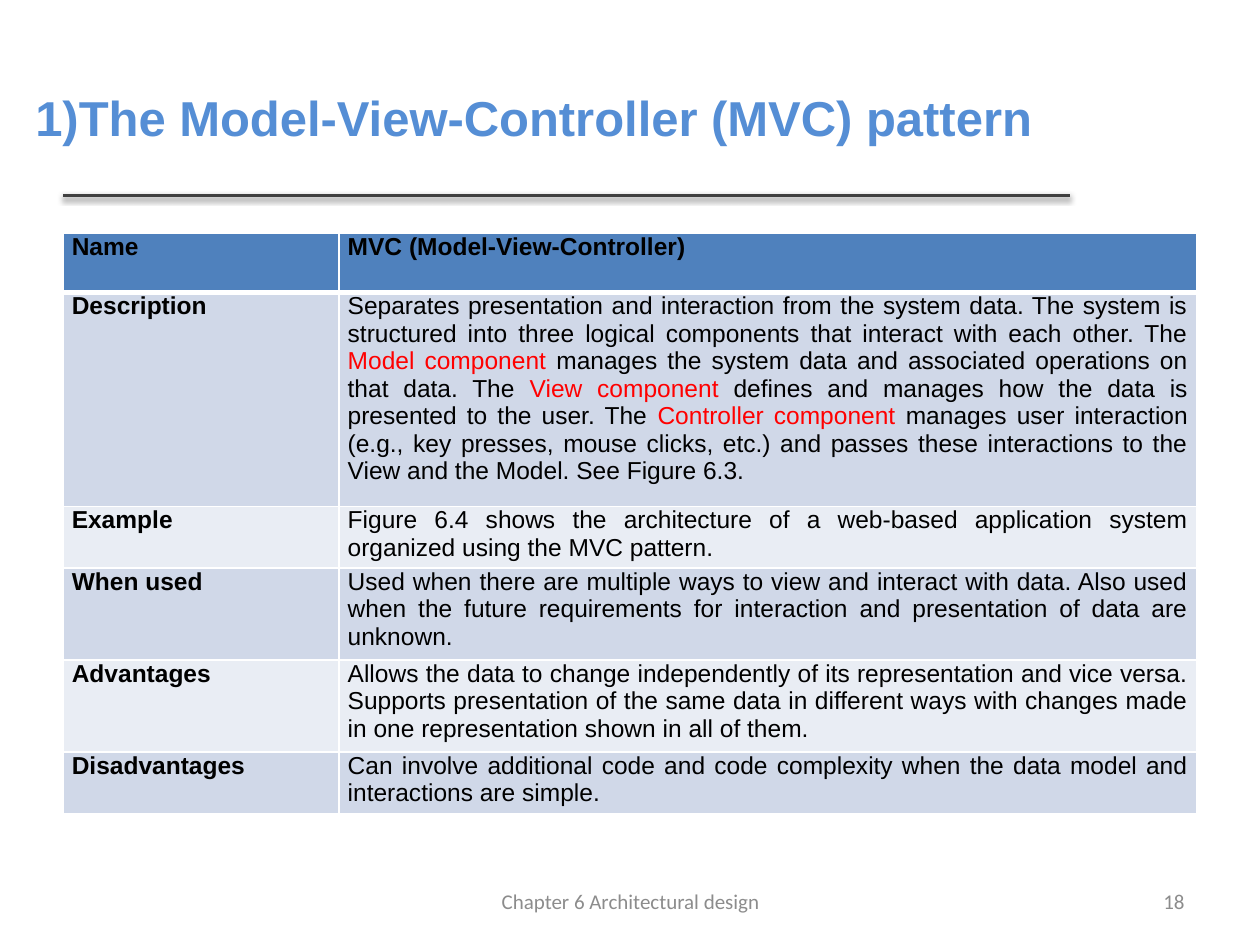
from dataclasses import dataclass
from typing import NamedTuple

from lxml import etree
from pptx import Presentation
from pptx.dml.color import RGBColor
from pptx.enum.shapes import MSO_CONNECTOR
from pptx.enum.text import MSO_ANCHOR, MSO_AUTO_SIZE, PP_ALIGN
from pptx.oxml import parse_xml
from pptx.oxml.ns import nsdecls, qn
from pptx.util import Inches, Length, Pt

LEFT, CENTER, RIGHT, JUSTIFY = PP_ALIGN.LEFT, PP_ALIGN.CENTER, PP_ALIGN.RIGHT, PP_ALIGN.JUSTIFY
MIDDLE = MSO_ANCHOR.MIDDLE
STRAIGHT = MSO_CONNECTOR.STRAIGHT
NO_FIT = MSO_AUTO_SIZE.NONE


@dataclass(frozen=True)
class Theme:
    title: str = "558ED5"
    head: str = "4F81BD"
    bands: tuple[str, str] = ("D0D8E8", "E9EDF4")
    edge: str = "FFFFFF"
    rule: str = "404040"
    text: str = "000000"
    mark: str = "FF0000"
    foot: str = "8C8C8C"
    font: str = "Arial"
    foot_font: str = "Calibri"
    title_size: int = 28
    size: int = 14
    foot_size: int = 12


class Run(NamedTuple):
    text: str
    size: int
    color: str
    font: str
    bold: bool = False


class Box(NamedTuple):
    """Left, top, width and height in grid units."""
    left: float
    top: float
    width: float
    height: float


class Row(NamedTuple):
    """A label, its text pieces (every second one marked) and a height."""
    label: str
    pieces: tuple[str, ...]
    height: float


class Note(NamedTuple):
    text: str
    box: Box
    align: PP_ALIGN


LOOK = Theme()
UNIT = Inches(0.1)  # the slide is 100 columns by 75 rows
COLS, LINES = 100, 75
MARGIN = 5
SPLIT = (21.9, 68.1)
TABLE_TOP = 18.5

ROWS = (
    Row("Name", ("MVC (Model-View-Controller)",), 4.7),
    Row("Description", (
        "Separates presentation and interaction from the system data. The system is structured "
        "into three logical components that interact with each other. The ",
        "Model component ",
        "manages the system data and associated operations on that data. The ",
        "View component ",
        "defines and manages how the data is presented to the user. The ",
        "Controller component ",
        "manages user interaction (e.g., key presses, mouse clicks, etc.) and passes these "
        "interactions to the View and the Model. See Figure 6.3.",
    ), 17),
    Row("Example", (
        "Figure 6.4 shows the architecture of a web-based application system organized using "
        "the MVC pattern.",), 4.9),
    Row("When used", (
        "Used when there are multiple ways to view and interact with data. Also used when the "
        "future requirements for interaction and presentation of data are unknown. ",), 7.3),
    Row("Advantages", (
        "Allows the data to change independently of its representation and vice versa. Supports "
        "presentation of the same data in different ways with changes made in one "
        "representation shown in all of them. ",), 7.3),
    Row("Disadvantages", (
        "Can involve additional code and code complexity when the data model and interactions "
        "are simple.",), 4.9),
)

NOTES = (
    Note("18", Box(71.7, 69.5, 23.3, 4), RIGHT),
    Note("Chapter 6 Architectural design", Box(34.2, 69.5, 31.7, 4), CENTER),
)


def grid(count: float) -> Length:
    return Length(round(count * UNIT))


def place(box: Box) -> list[Length]:
    return [grid(side) for side in box]


def write(frame, runs: list[Run], align: PP_ALIGN) -> None:
    para = frame.paragraphs[0]
    para.alignment = align
    for item in runs:
        run = para.add_run()
        run.text = item.text
        font = run.font
        font.name, font.size, font.bold = item.font, Pt(item.size), item.bold
        font.color.rgb = RGBColor.from_string(item.color)


def add_title(slide, text: str, box: Box) -> None:
    title = slide.shapes.title
    title.left, title.top, title.width, title.height = place(box)
    frame = title.text_frame
    frame.word_wrap, frame.auto_size = True, NO_FIT
    frame.vertical_anchor = MIDDLE
    write(frame, [Run(text, LOOK.title_size, LOOK.title, LOOK.font, True)], LEFT)


def add_rule(slide, start: float, end: float, top: float) -> None:
    rule = slide.shapes.add_connector(STRAIGHT, grid(start), grid(top), grid(end), grid(top))
    rule.line.width = Pt(2)
    rule.line.color.rgb = RGBColor.from_string(LOOK.rule)
    rule._element.spPr.append(parse_xml(
        f'<a:effectLst {nsdecls("a")}><a:outerShdw blurRad="{Pt(3.1)}" dist="{Pt(1.6)}" '
        f'dir="5400000" rotWithShape="0"><a:srgbClr val="{LOOK.text}">'
        '<a:alpha val="38000"/></a:srgbClr></a:outerShdw></a:effectLst>'))


def edge(cell, head: bool) -> None:
    """Draw the cell's borders, with a heavy one below the head row."""
    props = cell._tc.get_or_add_tcPr()
    for spot, side in enumerate("LRTB"):
        width = Pt(3 if head and side == "B" else 1)
        line = etree.Element(qn(f"a:ln{side}"), w=str(int(width)))
        fill = etree.SubElement(line, qn("a:solidFill"))
        etree.SubElement(fill, qn("a:srgbClr"), val=LOOK.edge)
        props.insert(spot, line)


def fill_cell(cell, runs: list[Run], color: str, head: bool) -> None:
    cell.margin_left = cell.margin_right = Inches(0.07)
    cell.margin_top = cell.margin_bottom = 0
    cell.fill.solid()
    cell.fill.fore_color.rgb = RGBColor.from_string(color)
    edge(cell, head)
    write(cell.text_frame, runs, JUSTIFY)


def add_grid(slide, rows: tuple[Row, ...]) -> None:
    box = Box(MARGIN, TABLE_TOP, sum(SPLIT), sum(row.height for row in rows))
    table = slide.shapes.add_table(len(rows), len(SPLIT), *place(box)).table
    table.first_row = table.horz_banding = False
    for col, width in zip(table.columns, SPLIT):
        col.width = grid(width)
    for spot, row in enumerate(rows):
        table.rows[spot].height = grid(row.height)
        head = spot == 0
        color = LOOK.head if head else LOOK.bands[(spot - 1) % 2]
        label = [Run(row.label, LOOK.size, LOOK.text, LOOK.font, True)]
        body = [Run(piece, LOOK.size, LOOK.mark if turn % 2 else LOOK.text, LOOK.font, head)
                for turn, piece in enumerate(row.pieces)]
        for col, runs in enumerate((label, body)):
            fill_cell(table.cell(spot, col), runs, color, head)


def add_note(slide, note: Note) -> None:
    frame = slide.shapes.add_textbox(*place(note.box)).text_frame
    frame.word_wrap = True
    frame.vertical_anchor = MIDDLE
    write(frame, [Run(note.text, LOOK.foot_size, LOOK.foot, LOOK.foot_font)], note.align)


def main() -> None:
    deck = Presentation()
    deck.slide_width, deck.slide_height = grid(COLS), grid(LINES)
    slide = deck.slides.add_slide(deck.slide_layouts.get_by_name("Title Only"))
    add_rule(slide, MARGIN, 84.9, 15.5)
    add_title(slide, "1)The Model-View-Controller (MVC) pattern", Box(1.8, 3, 82.9, 12.5))
    add_grid(slide, ROWS)
    for note in NOTES:
        add_note(slide, note)
    deck.save("out.pptx")


if __name__ == "__main__":
    main()
